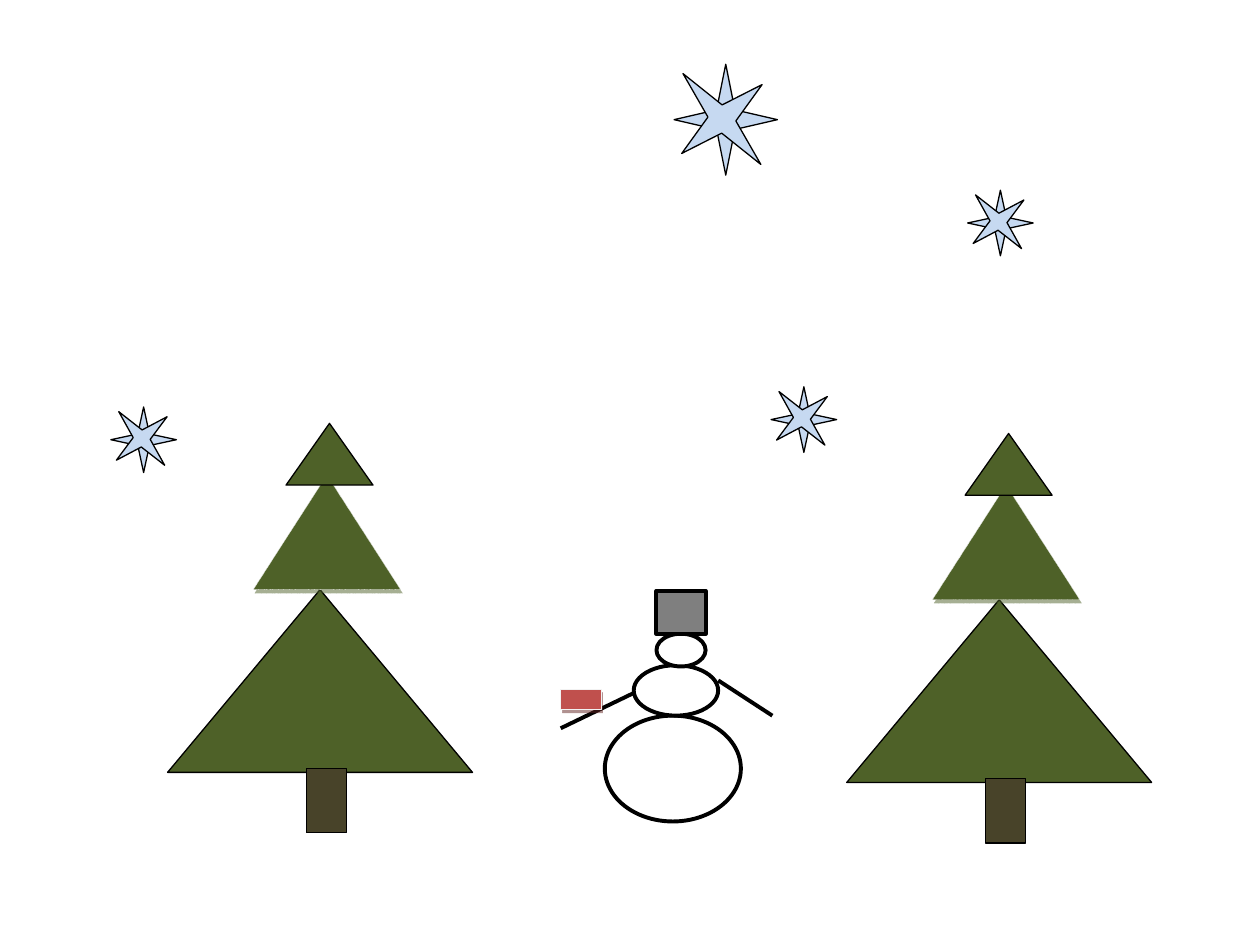
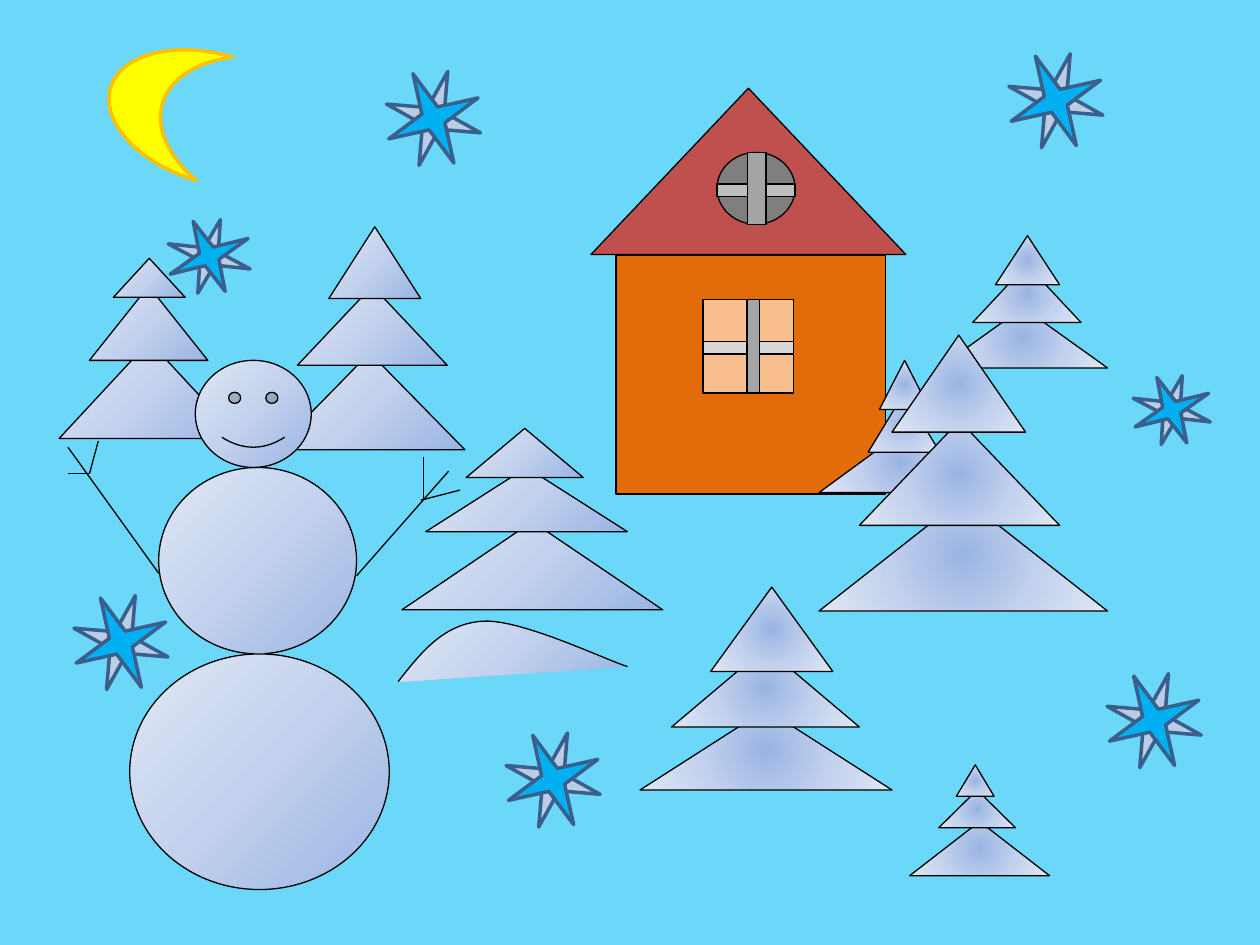
from dataclasses import dataclass

from lxml import etree
from pptx import Presentation
from pptx import util as u
from pptx.dml.color import RGBColor
from pptx.enum import dml, shapes
from pptx.oxml import parse_xml
from pptx.oxml.ns import nsdecls, qn

FORM = shapes.MSO_SHAPE


@dataclass(frozen=True)
class Theme:
    outline: str = "000000"
    pale_edge: str = "F2F2F2"
    white: str = "FFFFFF"
    hat: str = "7F7F7F"
    red: str = "C0504D"
    red_shadow: str = "622423"
    fir: str = "4E6128"
    trunk: str = "484329"
    ice: str = "C6D9F1"
    night: str = "6BD7F9"
    wall: str = "E36C0A"
    pane: str = "FABF8F"
    attic_pane: str = "7F7F7F"
    bar: str = "A5A5A5"
    sill: str = "D8D8D8"
    attic_sill: str = "BFBFBF"
    moon: str = "FFFF00"
    moon_edge: str = "FFC000"
    star_back: str = "B9CDE5"
    star_front: str = "00B0F0"
    star_edge: str = "3A5F8C"
    snow: tuple = ((0, "9AB5E4"), (50, "C2D1ED"), (100, "E1E8F5"))
    hairline: float = 0.25
    thin: float = 0.75
    medium: float = 2
    bold: float = 2.25


THEME = Theme()
SNOW_DIAGONAL = '<a:lin ang="13500000" scaled="0"/>'
SNOW_RADIAL = ('<a:path path="circle"><a:fillToRect l="50000" t="50000" '
               'r="50000" b="50000"/></a:path>')


# ---- Drawing helpers ----

def fill_with_snow(shape, direction):
    shape.fill.gradient()
    stops = "".join(f'<a:gs pos="{pos * 1000}"><a:srgbClr val="{color}"/></a:gs>'
                    for pos, color in THEME.snow)
    properties = shape._element.spPr
    properties.replace(properties.find(qn("a:gradFill")), parse_xml(
        f'<a:gradFill {nsdecls("a")} rotWithShape="1">'
        f'<a:gsLst>{stops}</a:gsLst>{direction}</a:gradFill>'))


def paint(shape, fill, edge=THEME.outline, width=THEME.thin):
    """Fill is a colour or one of the two snow gradient directions."""
    shape.shadow.inherit = False
    if fill in (SNOW_DIAGONAL, SNOW_RADIAL):
        fill_with_snow(shape, fill)
    else:
        shape.fill.solid()
        shape.fill.fore_color.rgb = RGBColor.from_string(fill)
    if edge is None:
        shape.line.fill.background()
    else:
        shape.line.color.rgb = RGBColor.from_string(edge)
        shape.line.width = u.Pt(width)
    return shape


def draw(parent, form, box, fill, edge=THEME.outline, width=THEME.thin, turn=0):
    shape = parent.shapes.add_shape(form, *map(u.Inches, box))
    shape.rotation = turn
    return paint(shape, fill, edge, width)


def stick(parent, start, end, width=THEME.thin):
    line = parent.shapes.add_connector(
        shapes.MSO_CONNECTOR.STRAIGHT, *map(u.Inches, start + end))
    line.line.color.rgb = RGBColor.from_string(THEME.outline)
    line.line.width = u.Pt(width)
    etree.SubElement(line._element.spPr, qn("a:effectLst"))


def drop_shadow(shape, color):
    shape._element.spPr.find(qn("a:effectLst")).append(parse_xml(
        f'<a:outerShdw {nsdecls("a")} dist="28400" dir="3800000" algn="ctr" '
        f'rotWithShape="0"><a:srgbClr val="{color}"><a:alpha val="50000"/>'
        f'</a:srgbClr></a:outerShdw>'))


def star(slide, back, front, fills, turns, edge, width):
    group = slide.shapes.add_group_shape()
    for box, fill, turn in zip((back, front), fills, turns):
        draw(group, FORM.STAR_4_POINT, box, fill, edge, width, turn)


def snow_fir(parent, tiers, snow):
    for tier in tiers:
        draw(parent, FORM.ISOSCELES_TRIANGLE, tier, snow)


# ---- Slide 1: firs, snowman and snowflakes ----

def hatted_snowman(slide):
    snowman = slide.shapes.add_group_shape()
    for ball in ((4.8, 5.68, 1.08, 0.84), (5.03, 5.28, 0.67, 0.4),
                 (5.21, 5.03, 0.39, 0.26)):
        draw(snowman, FORM.FLOWCHART_CONNECTOR, ball, THEME.white, width=THEME.bold)
    draw(snowman, FORM.RECTANGLE, (5.21, 4.69, 0.39, 0.34), THEME.hat,
         width=THEME.bold)
    stick(snowman, (5.03, 5.5), (4.45, 5.78), THEME.bold)
    stick(snowman, (5.7, 5.4), (6.13, 5.68), THEME.bold)

    mitten = draw(slide, FORM.FLOWCHART_PROCESS, (4.45, 5.47, 0.32, 0.16),
                  THEME.red, THEME.pale_edge, THEME.hairline)
    drop_shadow(mitten, THEME.red_shadow)


def green_fir(slide, left, top):
    fir = slide.shapes.add_group_shape()

    def part(form, dx, dy, width, height, *style):
        return draw(fir, form, (left + dx, top + dy, width, height), *style)

    part(FORM.ISOSCELES_TRIANGLE, 0, 1.32, 2.42, 1.45, THEME.fir)
    middle = part(FORM.ISOSCELES_TRIANGLE, 0.68, 0.41, 1.17, 0.91,
                  THEME.fir, THEME.pale_edge, THEME.hairline)
    middle.line.dash_style = dml.MSO_LINE.ROUND_DOT
    drop_shadow(middle, THEME.fir)
    part(FORM.ISOSCELES_TRIANGLE, 0.94, 0, 0.69, 0.49, THEME.fir)
    part(FORM.RECTANGLE, 1.1, 2.74, 0.32, 0.51, THEME.trunk)


def ice_star(slide, back, front):
    star(slide, back, front, (THEME.ice, THEME.ice), (0, 319.4),
         THEME.outline, THEME.thin)


def green_forest(slide):
    hatted_snowman(slide)
    green_fir(slide, 1.33, 3.36)
    green_fir(slide, 6.72, 3.44)
    ice_star(slide, (5.35, 0.51, 0.82, 0.88), (5.31, 0.47, 0.84, 0.95))
    for left, top in ((6.12, 3.07), (0.88, 3.23), (7.68, 1.51)):
        ice_star(slide, (left, top, 0.52, 0.52),
                 (left - 0.02, top - 0.03, 0.53, 0.56))


# ---- Slide 2: winter night ----

def house(slide):
    home = slide.shapes.add_group_shape()
    for form, box, fill in (
            (FORM.RECTANGLE, (4.89, 2.03, 2.14, 1.89), THEME.wall),
            (FORM.ISOSCELES_TRIANGLE, (4.69, 0.7, 2.5, 1.32), THEME.red),
            # Window
            (FORM.RECTANGLE, (5.58, 2.38, 0.72, 0.74), THEME.pane),
            (FORM.RECTANGLE, (5.58, 2.71, 0.72, 0.1), THEME.sill),
            (FORM.RECTANGLE, (5.93, 2.38, 0.1, 0.74), THEME.bar),
            # Attic window
            (FORM.OVAL, (5.69, 1.21, 0.62, 0.57), THEME.attic_pane),
            (FORM.RECTANGLE, (5.69, 1.46, 0.62, 0.1), THEME.attic_sill),
            (FORM.RECTANGLE, (5.93, 1.21, 0.15, 0.57), THEME.bar)):
        draw(home, form, box, fill)


def bezier(start, pull_a, pull_b, end, steps=20):
    for step in range(1, steps + 1):
        t = step / steps
        weights = ((1 - t) ** 3, 3 * t * (1 - t) ** 2, 3 * t * t * (1 - t), t ** 3)
        yield tuple(sum(w * p[axis] for w, p in
                        zip(weights, (start, pull_a, pull_b, end)))
                    for axis in (0, 1))


def snowdrift(parent):
    foot, crest, tail = (3.16, 5.41), (3.83, 4.93), (4.98, 5.29)
    ridge = [*bezier(foot, (3.34, 5.18), (3.52, 4.95), crest),
             *bezier(crest, (4.13, 4.91), (4.79, 5.23), tail)]
    builder = parent.shapes.build_freeform(*map(u.Inches, foot))
    builder.add_line_segments([tuple(map(u.Inches, point)) for point in ridge],
                              close=False)
    paint(builder.convert_to_shape(), SNOW_DIAGONAL)


def smiling_snowman(parent):
    for form, box in ((FORM.OVAL, (1.26, 3.71, 1.57, 1.48)),
                      (FORM.OVAL, (1.03, 5.19, 2.06, 1.87)),
                      (FORM.SMILEY_FACE, (1.55, 2.86, 0.92, 0.85))):
        draw(parent, form, box, SNOW_DIAGONAL)


def twig_arms(parent):
    for start, end in (((3.36, 3.97), (3.36, 3.63)), ((3.34, 3.97), (3.65, 3.89)),
                       ((2.83, 4.57), (3.56, 3.74)), ((0.71, 3.76), (0.78, 3.5)),
                       ((0.71, 3.76), (0.54, 3.76)), ((1.26, 4.55), (0.54, 3.55))):
        stick(parent, start, end)


def snowman_clearing(slide):
    clearing = slide.shapes.add_group_shape()
    left_fir = ((0.47, 2.71, 1.43, 0.77), (0.71, 2.27, 0.94, 0.59),
                (0.9, 2.05, 0.57, 0.31))
    right_fir = ((2.18, 2.8, 1.51, 0.77), (2.36, 2.27, 1.19, 0.63),
                 (2.61, 1.8, 0.73, 0.57))
    near_fir = ((3.19, 4.14, 2.07, 0.7), (3.38, 3.71, 1.6, 0.51),
                (3.7, 3.4, 0.93, 0.39))
    snow_fir(clearing, left_fir, SNOW_DIAGONAL)
    snow_fir(clearing, right_fir, SNOW_DIAGONAL)
    smiling_snowman(clearing)
    snow_fir(clearing, near_fir, SNOW_DIAGONAL)
    snowdrift(clearing)
    twig_arms(clearing)


def snowy_grove(slide):
    grove = slide.shapes.add_group_shape()
    house_fir = ((6.5, 3.43, 1.31, 0.48), (6.89, 3.12, 0.57, 0.47),
                 (6.98, 2.86, 0.4, 0.39))
    front_fir = ((5.08, 5.63, 2, 0.64), (5.33, 5.14, 1.49, 0.63),
                 (5.64, 4.66, 0.97, 0.67))
    far_fir = ((7.45, 2.44, 1.34, 0.48), (7.72, 2.1, 0.86, 0.46),
               (7.9, 1.87, 0.51, 0.39))
    tall_fir = ((6.5, 3.95, 2.29, 0.9), (6.82, 3.34, 1.59, 0.83),
                (7.08, 2.66, 1.06, 0.77))
    small_fir = ((7.22, 6.52, 1.11, 0.43), (7.45, 6.27, 0.61, 0.3),
                 (7.59, 6.07, 0.3, 0.25))
    for tiers in (house_fir, front_fir, far_fir, tall_fir, small_fir):
        snow_fir(grove, tiers, SNOW_RADIAL)


def night_sky(slide):
    draw(slide, FORM.MOON, (0.86, 0.31, 0.86, 1.02), THEME.moon,
         THEME.moon_edge, THEME.medium, 16.5)
    large = (0.78, 0.78)
    for place, size in (((3.05, 0.55), large), ((4, 5.8), large),
                        ((7.99, 0.41), large), ((1.32, 1.73), (0.68, 0.61)),
                        ((0.57, 4.71), large), ((8.77, 5.33), large),
                        ((8.98, 2.97), (0.64, 0.57))):
        star(slide, place + size, place + size,
             (THEME.star_back, THEME.star_front), (17, 335.4),
             THEME.star_edge, THEME.medium)


def winter_night(slide):
    draw(slide, FORM.RECTANGLE, (0, 0, 10, 7.5), THEME.night, None)
    house(slide)
    snowman_clearing(slide)
    snowy_grove(slide)
    night_sky(slide)


def main():
    deck = Presentation()
    deck.slide_width, deck.slide_height = u.Inches(10), u.Inches(7.5)
    blank = deck.slide_layouts[6]
    for scene in (green_forest, winter_night):
        scene(deck.slides.add_slide(blank))
    deck.save("out.pptx")


if __name__ == "__main__":
    main()
